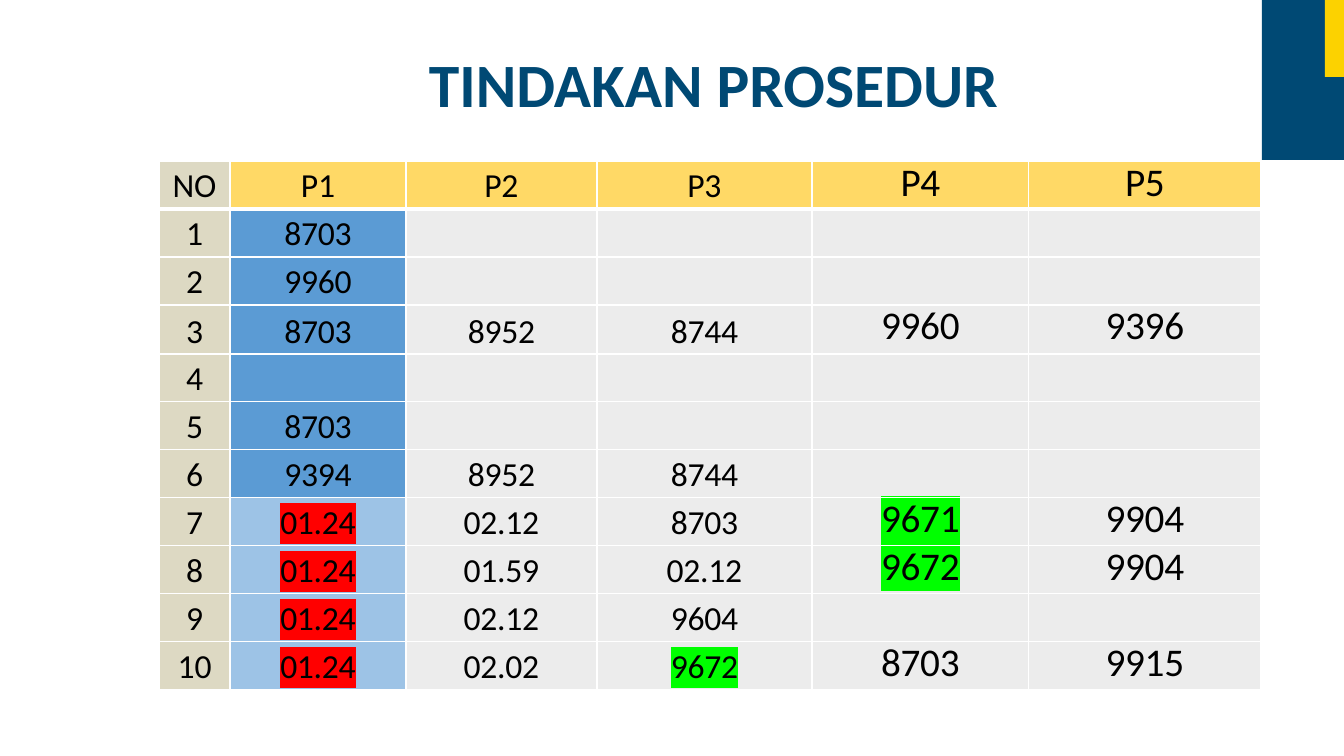
import pptx
import pptx.util
import pptx.dml.color
import pptx.enum.shapes
import pptx.enum.text
import pptx.oxml

COLORS = {
    "navy": "004974",
    "yellow": "FCD200",
    "header": "FFD966",
    "number": "DDD9C3",
    "blue": "5B9BD4",
    "pale_blue": "9DC3E6",
    "plain": "ECECEC",
    "gray": "DBDBDB",
    "black": "000000",
    "white": "FFFFFF",
    "red": "FF0000",
    "green": "00FF00",
}
FONT = "Calibri"
HIGHLIGHTS = {"01.24": "red", "9671": "green", "9672": "green"}
COL_WIDTHS = [71, 176, 191, 215, 217, 232]
ROW_HEIGHT = 48
TALL_ROW = 3
HEADER = ["NO", "P1", "P2", "P3", "P4", "P5"]
PROCEDURES = [
    ["8703"],
    ["9960"],
    ["8703", "8952", "8744", "9960", "9396"],
    [],
    ["8703"],
    ["9394", "8952", "8744"],
    ["01.24", "02.12", "8703", "9671", "9904"],
    ["01.24", "01.59", "02.12", "9672", "9904"],
    ["01.24", "02.12", "9604"],
    ["01.24", "02.02", "9672", "8703", "9915"],
]


def px(n):
    return pptx.util.Emu(round(n * 914400 / 100.8))


def rgb(name):
    return pptx.dml.color.RGBColor.from_string(COLORS[name])


def xml(tag, attrs, inner):
    ns = "http://schemas.openxmlformats.org/drawingml/2006/main"
    return pptx.oxml.parse_xml(f'<a:{tag} xmlns:a="{ns}" {attrs}>{inner}</a:{tag}>')


def srgb(name, inner=""):
    return f'<a:srgbClr val="{COLORS[name]}">{inner}</a:srgbClr>'


def set_margins(obj, left, top):
    obj.margin_left, obj.margin_top = px(left), px(top)
    obj.margin_right = obj.margin_bottom = 0


def add_title(slide, text):
    sp = slide.shapes.title
    sp.left, sp.top, sp.width, sp.height = px(106), px(29), px(1132), px(104)
    tf = sp.text_frame
    tf.text = text
    tf.auto_size = pptx.enum.text.MSO_AUTO_SIZE.NONE
    tf.vertical_anchor = pptx.enum.text.MSO_ANCHOR.TOP
    set_margins(tf, 323, 17)
    p = tf.paragraphs[0]
    p.alignment = pptx.enum.text.PP_ALIGN.LEFT
    r = p.runs[0]
    r.font.size = pptx.util.Pt(44)
    r.font.bold = True
    r.font.name = FONT
    r.font.color.rgb = rgb("navy")


def add_block(slide, left, top, width, height, color):
    sp = slide.shapes.add_shape(
        pptx.enum.shapes.MSO_SHAPE.RECTANGLE, px(left), px(top), px(width), px(height))
    sp.shadow.inherit = False
    sp.fill.solid()
    sp.fill.fore_color.rgb = rgb(color)
    sp.line.fill.background()


def cell_color(row, col):
    if col == 0:
        return "number"
    if row == 0:
        return "header"
    if col == 1:
        return "blue" if row <= 6 else "pale_blue"
    return "gray" if row >= 8 and col >= 3 else "plain"


def style_cell(cell, row, col):
    tcPr = cell._tc.get_or_add_tcPr()
    thick = {"lnT": row == 1, "lnB": row == 0}
    for side in ("lnL", "lnR", "lnT", "lnB"):
        width = pptx.util.Pt(3 if thick.get(side) else 1)
        tcPr.append(xml(side, f'w="{width}"', f'<a:solidFill>{srgb("white")}</a:solidFill>'))
    color = cell_color(row, col)
    alpha = '<a:alpha val="50000"/>' if color == "gray" else ""
    tcPr.append(xml("solidFill", "", srgb(color, alpha)))


def write_cell(cell, text, row, col):
    large = col >= 4
    set_margins(cell, 0, 0 if large else 7 if row == TALL_ROW else 5)
    cell.text = text
    p = cell.text_frame.paragraphs[0]
    p.alignment = pptx.enum.text.PP_ALIGN.CENTER
    if large:
        p.line_spacing = pptx.util.Pt(32.6)
    r = p.runs[0]
    r.font.size = pptx.util.Pt(28 if large else 24)
    r.font.color.rgb = rgb("black")
    rPr = r._r.get_or_add_rPr()
    if col > 0:
        rPr.set("spc", "-20")
    if text in HIGHLIGHTS:
        rPr.append(xml("highlight", "", srgb(HIGHLIGHTS[text])))
    r.font.name = FONT


def add_procedure_table(slide):
    rows = [HEADER] + [[str(i), *codes] for i, codes in enumerate(PROCEDURES, 1)]
    heights = [ROW_HEIGHT + (i == TALL_ROW) for i in range(len(rows))]
    table = slide.shapes.add_table(
        len(rows), len(HEADER), px(159), px(161), px(sum(COL_WIDTHS)), px(sum(heights))).table
    table.horz_banding = False
    for column, width in zip(table.columns, COL_WIDTHS):
        column.width = px(width)
    for i, texts in enumerate(rows):
        table.rows[i].height = px(heights[i])
        for j in range(len(HEADER)):
            cell = table.cell(i, j)
            style_cell(cell, i, j)
            if j < len(texts):
                write_cell(cell, texts[j], i, j)


def main():
    prs = pptx.Presentation()
    prs.slide_width, prs.slide_height = px(1344), px(756)
    slide = prs.slides.add_slide(prs.slide_layouts[5])
    add_title(slide, "TINDAKAN PROSEDUR")
    add_procedure_table(slide)
    add_block(slide, 1262, 0, 82, 160, "navy")
    add_block(slide, 1325, 0, 19, 77, "yellow")
    prs.save("out.pptx")


if __name__ == "__main__":
    main()
